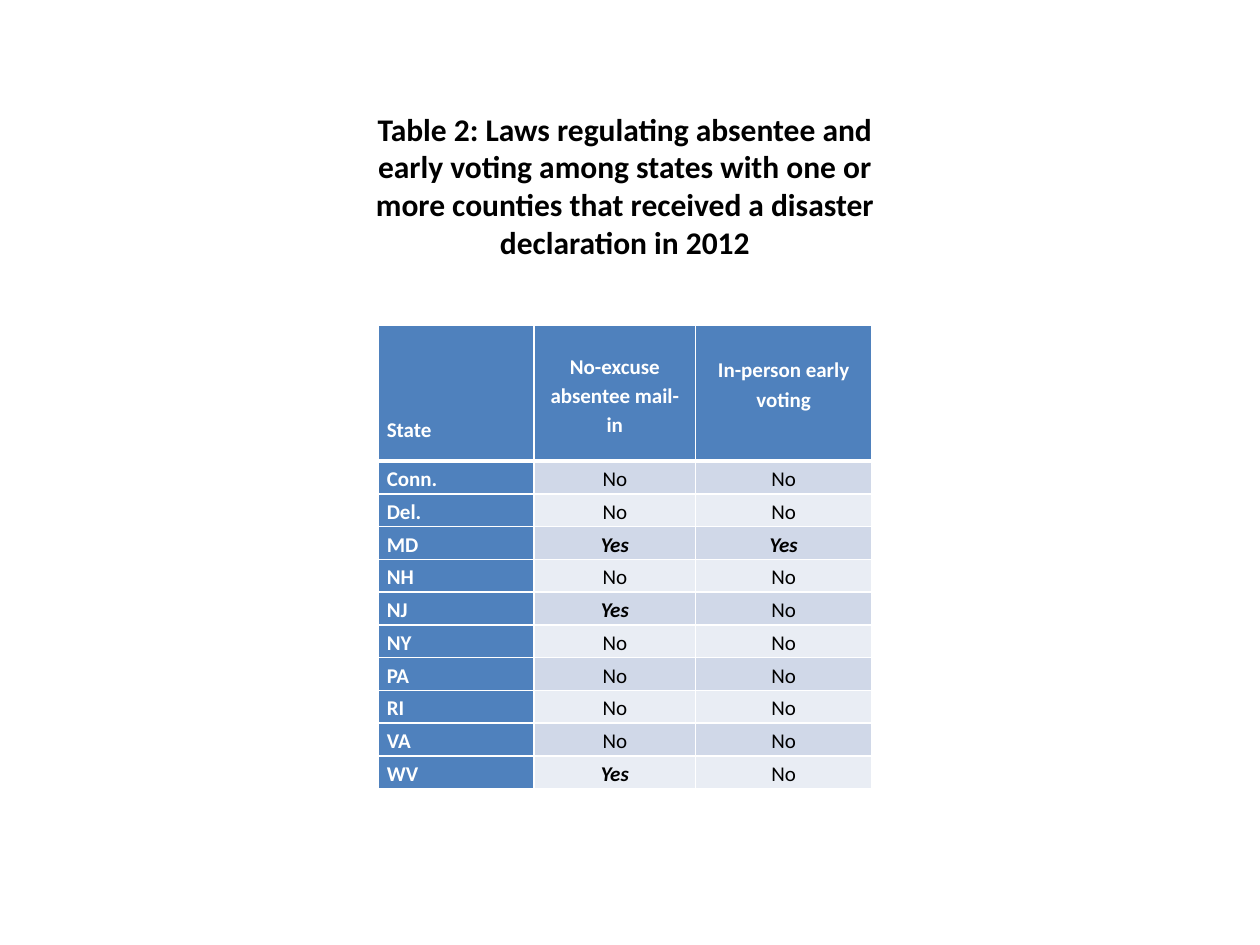
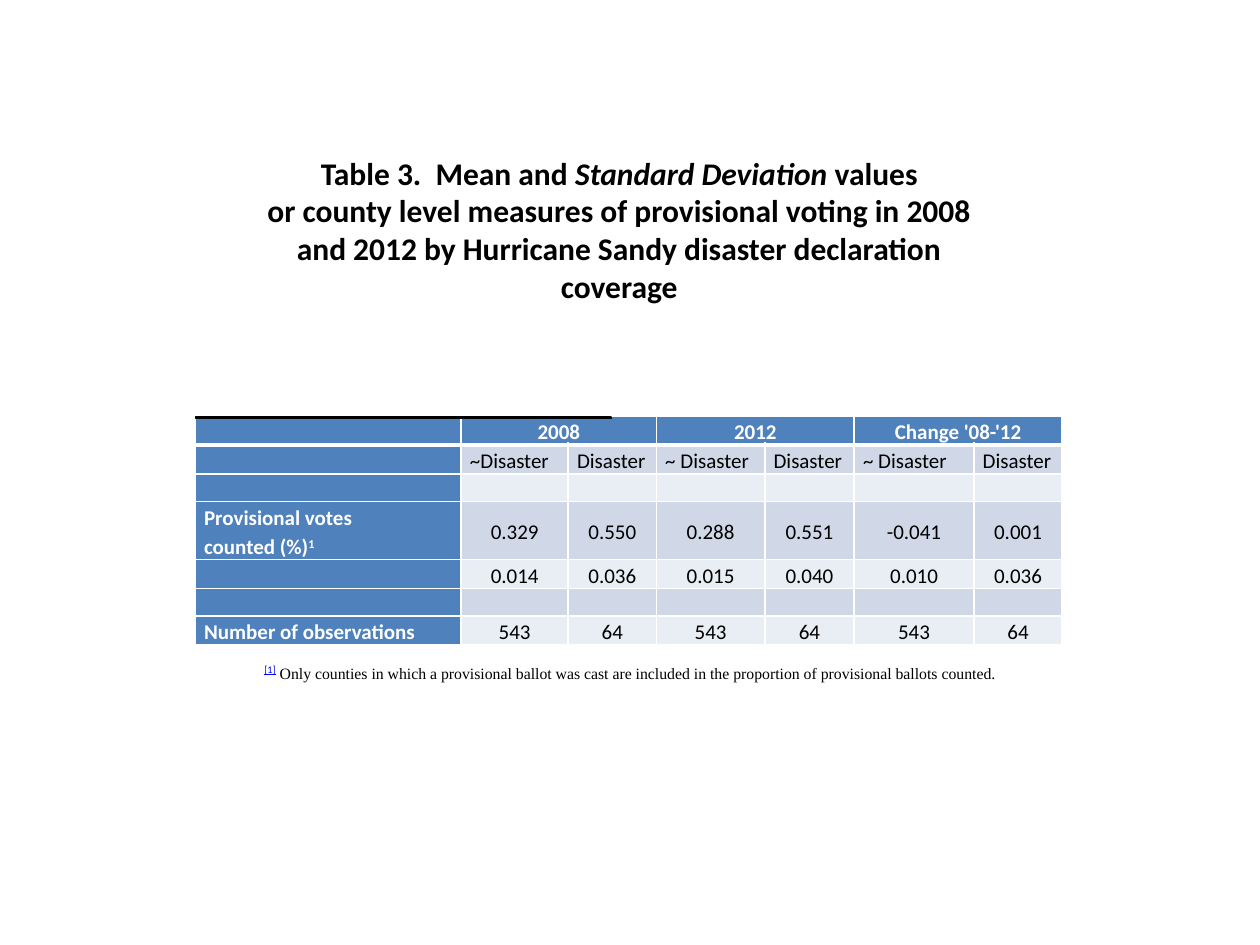
from lxml.etree import SubElement
from pptx import Presentation
from pptx.dml.color import RGBColor
from pptx.enum.shapes import MSO_SHAPE
from pptx.enum.text import MSO_ANCHOR, MSO_AUTO_SIZE, PP_ALIGN
from pptx.oxml.ns import qn
from pptx.util import Inches, Pt

COLORS = {
    "header": "4F81BD",
    "odd_band": "D0D8E8",
    "even_band": "E9EDF4",
    "white": "FFFFFF",
    "black": "000000",
    "link": "0000FF",
}
TITLE_STYLE = {"size": 18, "bold": True}


def add_run(paragraph, text, size=12, color="black", bold=False, italic=False,
            underline=False, raised=False, font_name="Calibri"):
    run = paragraph.add_run()
    run.text = text
    run.font.name = font_name
    run.font.size = Pt(size)
    run.font.color.rgb = RGBColor.from_string(COLORS[color])
    run.font.bold = bold
    run.font.italic = italic
    run.font.underline = underline
    if raised:
        run._r.get_or_add_rPr().set("baseline", "30000")


def add_banded_table(slide, left, top, widths, heights, rows):
    """Add a table with a coloured header row and first column; "Yes" stands out."""
    frame = slide.shapes.add_table(len(rows), len(widths), Inches(left), Inches(top),
                                   Inches(sum(widths)), Inches(sum(heights)))
    table = frame.table
    for column, width in zip(table.columns, widths):
        column.width = Inches(width)
    for row_index, texts in enumerate(rows):
        table.rows[row_index].height = Inches(heights[row_index])
        for column_index, text in enumerate(texts):
            cell = table.cell(row_index, column_index)
            is_header = row_index == 0 or column_index == 0
            cell.margin_left = cell.margin_right = Inches(0.07)
            cell.margin_top = cell.margin_bottom = 0
            cell.vertical_anchor = MSO_ANCHOR.MIDDLE

            border_widths = {
                "a:lnL": 1,
                "a:lnR": 1,
                "a:lnT": 3 if row_index == 1 else 1,
                "a:lnB": 3 if row_index == 0 else 1,
            }
            for tag, width in border_widths.items():
                line = SubElement(cell._tc.get_or_add_tcPr(), qn(tag), w=str(Pt(width)))
                SubElement(SubElement(line, qn("a:solidFill")), qn("a:srgbClr"),
                           val=COLORS["white"])
            band = "odd_band" if row_index % 2 else "even_band"
            cell.fill.solid()
            cell.fill.fore_color.rgb = RGBColor.from_string(
                COLORS["header" if is_header else band])

            for line_index, line_text in enumerate(text.split("\n")):
                text_frame = cell.text_frame
                paragraph = text_frame.add_paragraph() if line_index else text_frame.paragraphs[0]
                paragraph.line_spacing = 1.15
                paragraph.alignment = PP_ALIGN.CENTER if column_index else PP_ALIGN.LEFT
                if line_text:
                    add_run(paragraph, line_text, color="white" if is_header else "black",
                            bold=is_header or line_text == "Yes", italic=line_text == "Yes")
                else:
                    SubElement(paragraph._p, qn("a:endParaRPr"), sz="1200")
    return table


presentation = Presentation()
presentation.slide_width = Inches(10)
presentation.slide_height = Inches(7.5)
blank_layout = presentation.slide_layouts[6]

# Titles: box position and width, then paragraphs of (text, italic) runs
titles = [
    (2.67, 0.82, 4.58, [
        [("Table 2: Laws regulating absentee and early voting among states with one or "
          "more counties that received a disaster declaration in 2012", False)],
    ]),
    (2, 1.17, 5.83, [
        [("Table 3.  Mean and ", False), ("Standard Deviation", True), (" values", False)],
        [("or county level measures of provisional voting in 2008 and 2012 by "
          "Hurricane Sandy disaster declaration coverage", False)],
    ]),
]
slides = []
for left, top, width, title_paragraphs in titles:
    slide = presentation.slides.add_slide(blank_layout)
    slides.append(slide)
    title = slide.shapes.add_textbox(Inches(left), Inches(top), Inches(width), Inches(1.62))
    text_frame = title.text_frame
    text_frame.word_wrap = True
    text_frame.auto_size = MSO_AUTO_SIZE.SHAPE_TO_FIT_TEXT
    for index, runs in enumerate(title_paragraphs):
        paragraph = text_frame.add_paragraph() if index else text_frame.paragraphs[0]
        paragraph.alignment = PP_ALIGN.CENTER
        for text, italic in runs:
            add_run(paragraph, text, italic=italic, **TITLE_STYLE)
laws_slide, votes_slide = slides

# Slide 1: voting laws by state
law_rows = [
    ("State", "No-excuse absentee mail-in", "In-person early voting"),
    ("Conn.", "No", "No"),
    ("Del.", "No", "No"),
    ("MD", "Yes", "Yes"),
    ("NH", "No", "No"),
    ("NJ", "Yes", "No"),
    ("NY", "No", "No"),
    ("PA", "No", "No"),
    ("RI", "No", "No"),
    ("VA", "No", "No"),
    ("WV", "Yes", "No"),
]
laws_table = add_banded_table(laws_slide, 3, 2.58, [1.24, 1.28, 1.4],
                              [1.08] + [0.26] * 10, law_rows)
for column_index, header_margin in enumerate([0.7, 0.2, 0.23]):
    cell = laws_table.cell(0, column_index)
    cell.vertical_anchor = MSO_ANCHOR.TOP
    cell.margin_top = Inches(header_margin)

# Slide 2: provisional votes
vote_rows = [
    ("", "2008", "", "2012", "", "Change '08-'12", ""),
    ("", "~Disaster", "Disaster", "~ Disaster", "Disaster", "~ Disaster", "Disaster"),
    ("",) * 7,
    ("Provisional votes\ncounted (%)", "0.329", "0.550", "0.288", "0.551", "-0.041", "0.001"),
    ("", "0.014", "0.036", "0.015", "0.040", "0.010", "0.036"),
    ("",) * 7,
    ("Number of observations", "543", "64", "543", "64", "543", "64"),
]
votes_table = add_banded_table(votes_slide, 1.55, 3.3,
                               [2.11, 0.85, 0.7, 0.86, 0.71, 0.95, 0.7],
                               [0.22] * 3 + [0.44] + [0.22] * 3, vote_rows)
for column_index in (1, 3, 5):
    votes_table.cell(0, column_index).merge(votes_table.cell(0, column_index + 1))
for column_index in range(1, 7):
    votes_table.cell(1, column_index).text_frame.paragraphs[0].alignment = PP_ALIGN.LEFT
add_run(votes_table.cell(3, 0).text_frame.paragraphs[1], "1", color="white",
        bold=True, raised=True)

rule = votes_slide.shapes.add_shape(MSO_SHAPE.RECTANGLE, Inches(1.55), Inches(3.31),
                                    Inches(3.3), Inches(0.01))
rule.shadow.inherit = False
rule.fill.solid()
rule.fill.fore_color.rgb = RGBColor.from_string(COLORS["black"])
rule.line.color.rgb = RGBColor.from_string(COLORS["black"])
rule.line.width = Pt(0.75)

footnote = votes_slide.shapes.add_textbox(Inches(2), Inches(5.2), Inches(6.25), Inches(0.27))
footnote.text_frame.word_wrap = True
footnote.text_frame.auto_size = MSO_AUTO_SIZE.SHAPE_TO_FIT_TEXT
footnote.text_frame.vertical_anchor = MSO_ANCHOR.MIDDLE
paragraph = footnote.text_frame.paragraphs[0]
add_run(paragraph, "[1]", size=10, color="link", underline=True, raised=True)
add_run(paragraph, " ", size=10)
add_run(paragraph, "Only counties in which a provisional ballot was cast are included in the "
        "proportion of provisional ballots counted.", size=9, font_name="Times New Roman")

presentation.save("out.pptx")
